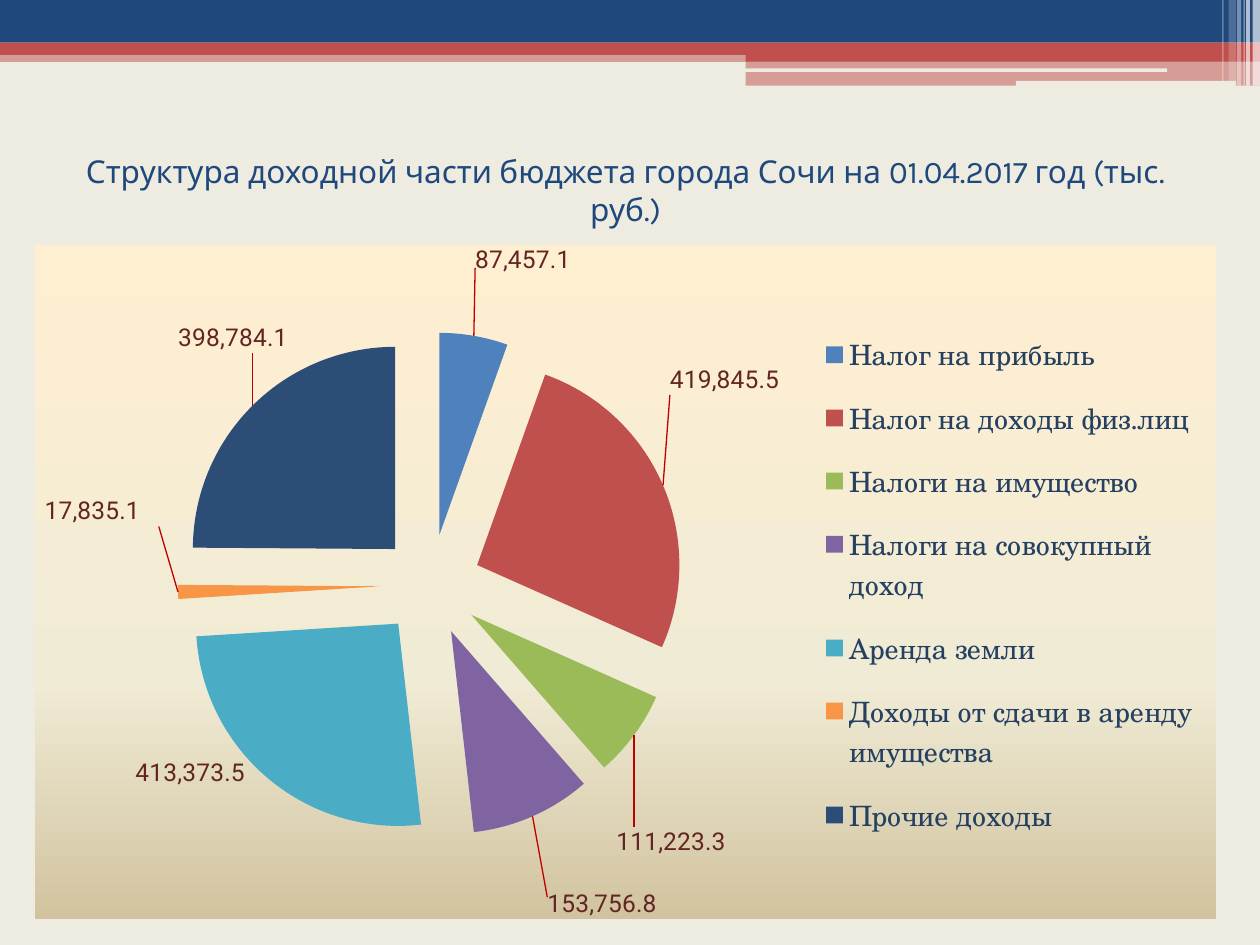
from dataclasses import dataclass
from typing import Any, NamedTuple

from lxml import etree
from pptx import Presentation, chart as _chart, util as u
from pptx.chart import data as chart_data
from pptx.dml import color
from pptx.enum import chart as chart_enum, shapes, text
from pptx.oxml import parse_xml, ns


@dataclass(frozen=True)
class Theme:
    paper: str = "EEECE1"
    navy: str = "1F497D"
    red: str = "C0504D"
    white: str = "FFFFFF"
    legend: str = "254061"
    label: str = "632523"
    leader: str = "C00000"
    title_font: str = "Karla"
    label_font: str = "Roboto"
    legend_font: str = "TeX Gyre Schola"
    title_size: int = 18
    label_size: int = 14
    legend_size: int = 16


class Band(NamedTuple):
    left: float
    top: float
    width: float
    height: float
    fill: str
    opacity: int = 100
    rounded: bool = False


class Slice(NamedTuple):
    name: str
    value: float
    fill: str
    shift_x: float
    shift_y: float


class Stop(NamedTuple):
    position: int
    fill: str


THEME = Theme()
BANDS = [
    Band(0, 1.02, 25.4, 0.23, THEME.red, 50),
    Band(0, 0, 25.4, 0.86, THEME.navy),
    Band(0, 0.86, 25.4, 0.25, THEME.red),
    Band(15.03, 0.99, 10.37, 0.25, THEME.red),
    Band(15.03, 1.23, 10.37, 0.5, THEME.red, 50),
    Band(15.02, 1.38, 8.51, 0.07, THEME.paper, rounded=True),
    Band(20.48, 1.63, 4.44, 0.1, THEME.paper, rounded=True),
    Band(25.25, 0, 0.15, 1.73, THEME.white, 65),
    Band(25.12, 0, 0.08, 1.73, THEME.white, 65),
    Band(25.07, 0, 0.02, 1.73, THEME.white, 60),
    Band(24.94, 0, 0.08, 1.73, THEME.white, 40),
    Band(24.77, 0, 0.15, 1.63, THEME.white, 20),
    Band(24.64, 0, 0.03, 1.63, THEME.white, 30),
]
SLICES = [
    Slice("Налог на прибыль", 87457.1, "4F81BD", 0, -0.09),
    Slice("Налог на доходы физ.лиц", 419845.5, "C0504D", 0, -0.13),
    Slice("Налоги на имущество", 111223.3, "9BBB59", -0.02, 0.13),
    Slice("Налоги на совокупный доход", 153756.8, "8064A2", 0.01, 0.11),
    Slice("Аренда земли", 413373.5, "4BACC6", 0, -0.04),
    Slice("Доходы от сдачи в аренду имущества", 17835.1, "F79646", -0.01, -0.12),
    Slice("Прочие доходы", 398784.1, "2C4D75", 0.05, -0.07),
]
STOPS = [Stop(0, "FFEFD1"), Stop(65, "F0EBD5"), Stop(100, "D1C39F")]
NAMESPACES = ns.nsdecls("c", "a")


def apply(target: Any, values: dict[str, Any]) -> None:
    for name, value in values.items():
        setattr(target, name, value)


def style_font(font: Any, name: str, size: int, fill: str) -> None:
    apply(font, {"name": name, "size": u.Pt(size), "bold": False})
    font.color.rgb = color.RGBColor.from_string(fill)


def paint(fill: Any, rgb: str) -> None:
    fill.solid()
    fill.fore_color.rgb = color.RGBColor.from_string(rgb)


def draw_band(slide: Any, band: Band) -> None:
    kind = shapes.MSO_SHAPE.ROUNDED_RECTANGLE if band.rounded else shapes.MSO_SHAPE.RECTANGLE
    shape = slide.shapes.add_shape(kind, *map(u.Cm, band[:4]))
    shape.shadow.inherit = False
    shape.line.fill.background()
    paint(shape.fill, band.fill)
    if band.opacity < 100:
        tint = shape.fill._xPr.find(".//" + ns.qn("a:srgbClr"))
        etree.SubElement(tint, ns.qn("a:alpha"), val=str(band.opacity * 1000))


def draw_title(slide: Any, wording: str) -> None:
    box = slide.shapes.add_textbox(*map(u.Cm, (0.71, 2.34, 23.8, 2.97)))
    apply(box.text_frame, {"word_wrap": True, "vertical_anchor": text.MSO_ANCHOR.MIDDLE})
    paragraph = box.text_frame.paragraphs[0]
    apply(paragraph, {"text": wording, "alignment": text.PP_ALIGN.CENTER})
    style_font(paragraph.runs[0].font, THEME.title_font, THEME.title_size, THEME.navy)


def layout_xml(inner: bool = False, **values: float) -> str:
    target = '<c:layoutTarget val="inner"/>' if inner else ""
    modes = "".join(f'<c:{key}Mode val="edge"/>' for key in "xy" if "w" in values)
    sizes = "".join(f'<c:{key} val="{value}"/>' for key, value in values.items())
    return f"<c:layout {NAMESPACES}><c:manualLayout>{target}{modes}{sizes}</c:manualLayout></c:layout>"


def set_layout(element: Any, xml: str, before: str) -> None:
    for old in element.findall(ns.qn("c:layout")):
        element.remove(old)
    element.find(ns.qn(before)).addprevious(parse_xml(xml))


def labels_xml(slices: list[Slice]) -> str:
    style = f"""<c:numFmt formatCode="#,##0.0_р_." sourceLinked="0"/>
        <c:spPr><a:noFill/><a:ln><a:noFill/></a:ln></c:spPr>
        <c:txPr><a:bodyPr/><a:p><a:pPr><a:defRPr sz="{THEME.label_size * 100}" b="0">
        <a:solidFill><a:srgbClr val="{THEME.label}"/></a:solidFill>
        <a:latin typeface="{THEME.label_font}"/></a:defRPr></a:pPr>
        <a:endParaRPr lang="ru-RU"/></a:p></c:txPr><c:dLblPos val="outEnd"/>
        <c:showLegendKey val="0"/><c:showVal val="1"/><c:showCatName val="0"/>
        <c:showSerName val="0"/><c:showPercent val="0"/><c:showBubbleSize val="0"/>"""
    labels = "".join(
        f'<c:dLbl><c:idx val="{index}"/>{layout_xml(x=part.shift_x, y=part.shift_y)}{style}</c:dLbl>'
        for index, part in enumerate(slices)
    )
    return f"""<c:dLbls {NAMESPACES}>{labels}{style}<c:showLeaderLines val="1"/>
        <c:leaderLines><c:spPr><a:ln w="9525"><a:solidFill><a:srgbClr val="{THEME.leader}"/>
        </a:solidFill></a:ln></c:spPr></c:leaderLines></c:dLbls>"""


def background_xml(stops: list[Stop]) -> str:
    marks = "".join(
        f'<a:gs pos="{stop.position * 1000}"><a:srgbClr val="{stop.fill}"/></a:gs>' for stop in stops
    )
    return f"""<c:spPr {NAMESPACES}><a:gradFill><a:gsLst>{marks}</a:gsLst>
        <a:lin ang="5400000" scaled="0"/></a:gradFill><a:ln><a:noFill/></a:ln></c:spPr>"""


def draw_pie(slide: Any, slices: list[Slice]) -> None:
    data = chart_data.CategoryChartData(number_format="#,##0.0")
    data.categories = [part.name for part in slices]
    data.add_series("Series 1", [part.value for part in slices])
    frame = slide.shapes.add_chart(
        chart_enum.XL_CHART_TYPE.PIE, *map(u.Cm, (0.71, 4.93, 23.8, 13.59)), data
    )
    chart = frame.chart
    apply(chart, {"has_title": False, "has_legend": True})
    style_font(chart.font, THEME.legend_font, 18, "000000")
    apply(chart.legend, {"position": chart_enum.XL_LEGEND_POSITION.RIGHT, "include_in_layout": False})
    style_font(chart.legend.font, THEME.legend_font, THEME.legend_size, THEME.legend)
    chart.plots[0].vary_by_categories = True

    series = chart.plots[0].series[0]
    for index, part in enumerate(slices):
        paint(series.points[index].format.fill, part.fill)
    element = series._element
    element.find(ns.qn("c:dPt")).addprevious(parse_xml(f'<c:explosion {NAMESPACES} val="25"/>'))
    element.find(ns.qn("c:cat")).addprevious(parse_xml(labels_xml(slices)))

    area = chart._chartSpace.chart.plotArea
    set_layout(area, layout_xml(inner=True, x=0.12, y=0.13, w=0.43, h=0.75), "c:pieChart")
    set_layout(chart.legend._element, layout_xml(x=0.66, y=0.1, w=0.33, h=0.81), "c:overlay")
    chart._chartSpace.chart.addnext(parse_xml(background_xml(STOPS)))


def main() -> None:
    presentation = Presentation()
    apply(presentation, {"slide_width": u.Cm(25.4), "slide_height": u.Cm(19.05)})
    slide = presentation.slides.add_slide(presentation.slide_layouts[6])
    paint(slide.background.fill, THEME.paper)
    for band in BANDS:
        draw_band(slide, band)
    draw_title(slide, "Структура доходной части бюджета города Сочи на 01.04.2017 год (тыс. руб.)")
    draw_pie(slide, SLICES)
    presentation.save("out.pptx")


if __name__ == "__main__":
    main()
